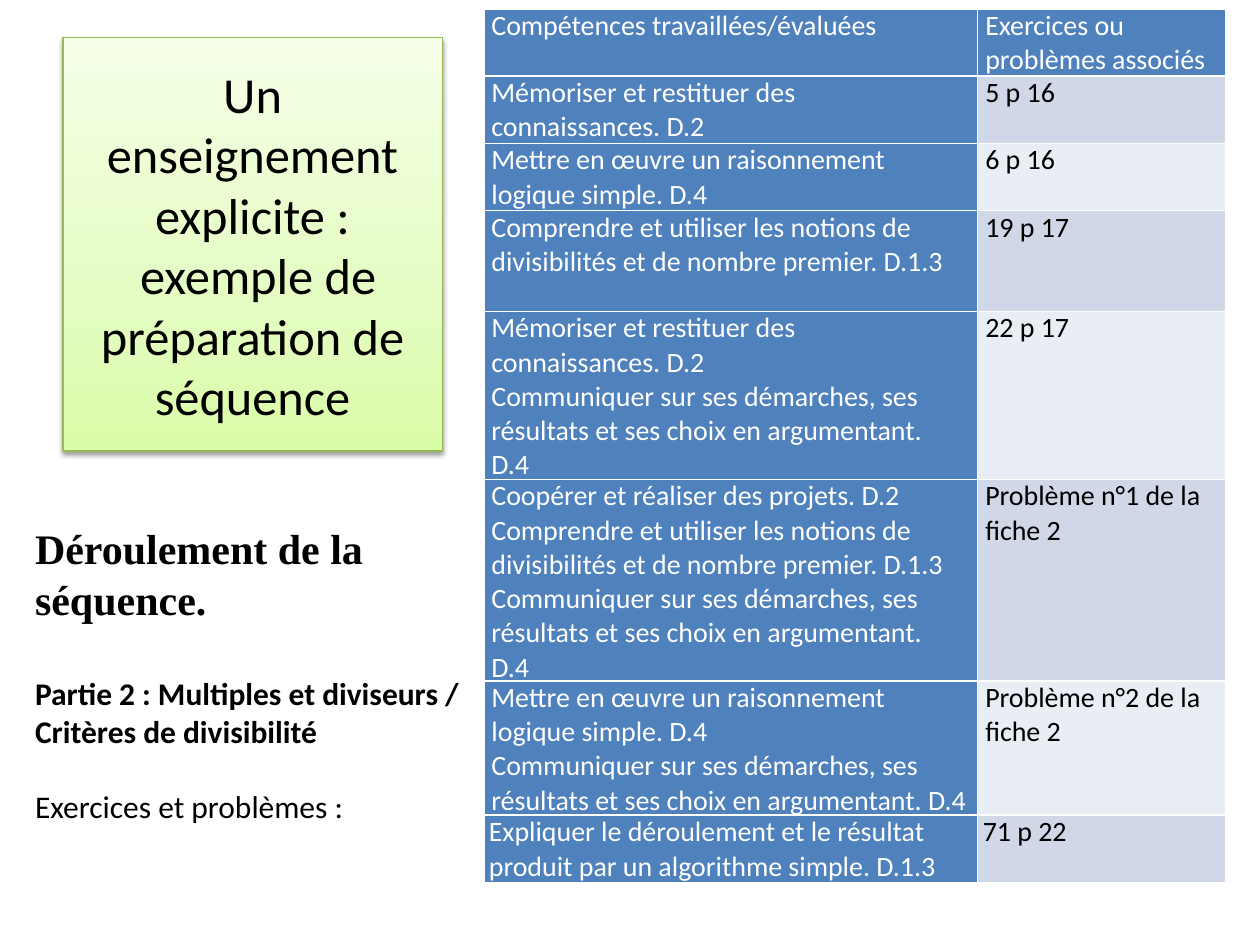
from copy import deepcopy

from lxml.etree import SubElement
from pptx import Presentation
from pptx.dml.color import RGBColor
from pptx.enum.text import MSO_ANCHOR, MSO_AUTO_SIZE, PP_ALIGN
from pptx.oxml.ns import qn
from pptx.util import Inches, Pt

COLORS = {
    "text": "000000",
    "white": "FFFFFF",
    "blue": "4F81BD",
    "band_dark": "D0D8E8",
    "band_light": "E9EDF4",
    "title_line": "98B955",
}
TITLE_GRADIENT = [(0, "DAFDA7"), (0.35, "E4FCC2"), (1, "F5FFE7")]

HARD_SPACE = chr(160)
MEMORIZE = "Mémoriser et restituer des connaissances. D.2" + HARD_SPACE
REASON = "Mettre en œuvre un raisonnement logique simple. D.4"
DIVISIBILITY = "Comprendre et utiliser les notions de divisibilités et de nombre premier. D.1.3"
COMMUNICATE = "Communiquer sur ses démarches, ses résultats et ses choix en argumentant. D.4"
COOPERATE = "Coopérer et réaliser des projets. D.2"
EXPLAIN = "Expliquer le déroulement et le résultat produit par un algorithme simple. D.1.3"

# Row height, skills, associated exercise
ROWS = [
    (0.46, ["Compétences travaillées/évaluées"], "Exercices ou problèmes associés"),
    (0.26, [MEMORIZE], "5 p 16"),
    (0.52, [REASON + HARD_SPACE], "6 p 16"),
    (0.8, [DIVISIBILITY], "19 p 17"),
    (0.79, [MEMORIZE, COMMUNICATE + HARD_SPACE], "22 p 17"),
    (1.31, [COOPERATE, DIVISIBILITY, COMMUNICATE + HARD_SPACE], "Problème n°1 de la fiche 2"),
    (0.91, [REASON, COMMUNICATE], "Problème n°2 de la fiche 2"),
    (0.52, [EXPLAIN], "71 p 22"),
]

# Text, font, size, bold, space before
OUTLINE = [
    ("Déroulement de la séquence.", "Times New Roman", 24, True, 0),
    (f"Partie 2{HARD_SPACE}: Multiples et diviseurs / Critères de divisibilité",
     "Calibri", 18, True, 29),
    (f"Exercices et problèmes{HARD_SPACE}:", "Calibri", 18, False, 21),
]


def rgb(name):
    return RGBColor.from_string(COLORS[name])


class SlideBuilder:
    font = "Calibri"

    def __init__(self, presentation):
        self.slide = presentation.slides.add_slide(presentation.slide_layouts[5])

    def format_runs(self, paragraph, size, color="text", bold=False, font=None):
        for run in paragraph.runs:
            run.font.name = font or self.font
            run.font.size = Pt(size)
            run.font.bold = bold
            run.font.color.rgb = rgb(color)

    def add_title(self, text, left, top, width, height):
        title = self.slide.shapes.title
        title.left, title.top = Inches(left), Inches(top)
        title.width, title.height = Inches(width), Inches(height)
        self.fill_gradient(title, TITLE_GRADIENT)
        title.line.color.rgb = rgb("title_line")
        title.line.width = Pt(0.75)
        self.add_shadow(title)
        frame = title.text_frame
        frame.text = text
        frame.word_wrap = True
        frame.auto_size = MSO_AUTO_SIZE.NONE
        frame.vertical_anchor = MSO_ANCHOR.MIDDLE
        paragraph = frame.paragraphs[0]
        paragraph.alignment = PP_ALIGN.CENTER
        self.format_runs(paragraph, 28.8)

    def fill_gradient(self, shape, stops):
        """Fill from bottom to top with the given (position, colour) stops."""
        shape.fill.gradient()
        shape.fill.gradient_angle = 90
        stop_list = shape._element.spPr.find(".//" + qn("a:gsLst"))
        while len(stop_list) < len(stops):
            stop_list.append(deepcopy(stop_list[0]))
        for stop, (position, color) in zip(shape.fill.gradient_stops, stops):
            stop.color.rgb = RGBColor.from_string(color)
            stop.position = position

    def add_shadow(self, shape):
        effects = SubElement(shape._element.spPr, qn("a:effectLst"))
        shadow = SubElement(
            effects, qn("a:outerShdw"), blurRad=str(Pt(3.1)), dist=str(Pt(1.6)),
            dir=str(90 * 60000), rotWithShape="0")
        color = SubElement(shadow, qn("a:srgbClr"), val=COLORS["text"])
        SubElement(color, qn("a:alpha"), val="38000")

    def add_outline(self, items, left, top, width, height):
        box = self.slide.shapes.add_textbox(
            Inches(left), Inches(top), Inches(width), Inches(height))
        frame = box.text_frame
        frame.word_wrap = True
        frame.auto_size = MSO_AUTO_SIZE.SHAPE_TO_FIT_TEXT
        frame.text = "\n".join(item[0] for item in items)
        for paragraph, (_, font, size, bold, gap) in zip(frame.paragraphs, items):
            paragraph.space_before = Pt(gap)
            self.format_runs(paragraph, size, bold=bold, font=font)

    def add_skills_table(self, rows, left, top, column_widths, height):
        graphic_frame = self.slide.shapes.add_table(
            len(rows), len(column_widths), Inches(left), Inches(top),
            Inches(sum(column_widths)), Inches(height))
        table = graphic_frame.table
        table.first_row = table.horz_banding = False
        for column, width in zip(table.columns, column_widths):
            column.width = Inches(width)
        for index, (row_height, skills, exercise) in enumerate(rows):
            table.rows[index].height = Inches(row_height)
            header = index == 0
            band = "band_dark" if index % 2 else "band_light"
            margin = 0.04 if index == len(rows) - 1 else 0.06
            skill_cell, exercise_cell = table.rows[index].cells
            self.format_cell(skill_cell, "\n".join(skills), "blue", "white", margin)
            self.format_cell(
                exercise_cell, exercise, "blue" if header else band,
                "white" if header else "text", margin)
        graphic_frame.height = Inches(height)

    def format_cell(self, cell, text, fill, color, margin):
        cell.margin_left = cell.margin_right = Inches(margin)
        cell.margin_top = cell.margin_bottom = 0
        for side in ("L", "R", "T", "B"):
            self.add_border(cell, side)
        cell.fill.solid()
        cell.fill.fore_color.rgb = rgb(fill)
        cell.text_frame.text = text
        for paragraph in cell.text_frame.paragraphs:
            self.format_runs(paragraph, 16, color)

    def add_border(self, cell, side):
        properties = cell._tc.get_or_add_tcPr()
        line = SubElement(properties, qn("a:ln" + side), w=str(Pt(1)))
        fill = SubElement(line, qn("a:solidFill"))
        SubElement(fill, qn("a:srgbClr"), val=COLORS["white"])


def main():
    presentation = Presentation()
    presentation.slide_width, presentation.slide_height = Inches(10), Inches(7.5)
    builder = SlideBuilder(presentation)
    builder.add_outline(OUTLINE, 0.18, 4.1, 3.67, 2.52)
    builder.add_skills_table(ROWS, 3.84, 0.07, [3.92, 1.97], 7.2)
    builder.add_title(
        "Un enseignement explicite :\v exemple de préparation de séquence",
        0.5, 0.3, 3.01, 3.28)
    presentation.save("out.pptx")


if __name__ == "__main__":
    main()
